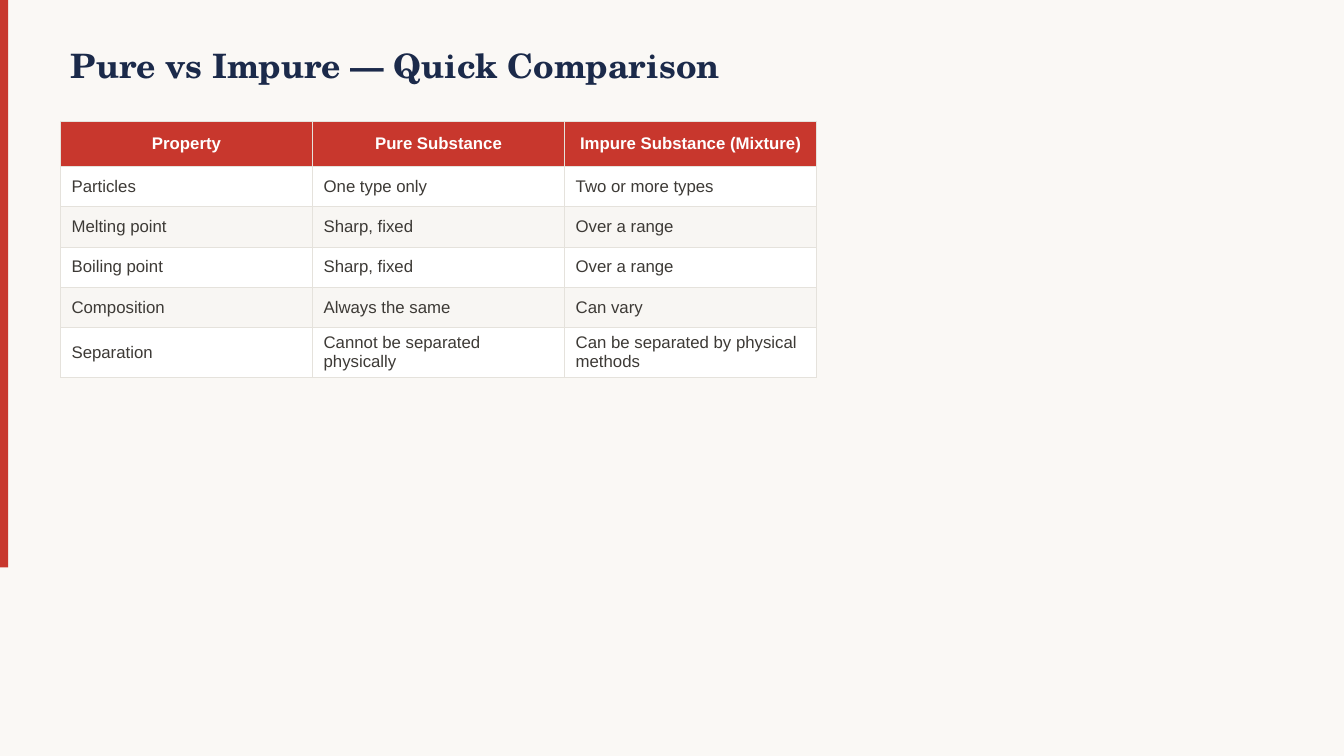
from lxml import etree
from pptx import Presentation
from pptx.dml.color import RGBColor
from pptx.enum.shapes import MSO_SHAPE as Preset
from pptx.enum.text import MSO_ANCHOR as Anchor, MSO_AUTO_SIZE as AutoSize, PP_ALIGN as Align
from pptx.oxml import parse_xml
from pptx.oxml.ns import nsdecls
from pptx.util import Pt

PX = 9144
COLORS = {
    "background": "FAF8F5",
    "accent": "C8372D",
    "title": "1B2A4A",
    "header_text": "FFFFFF",
    "body_text": "3D3A36",
    "odd_row": "FFFFFF",
    "even_row": "F8F6F3",
    "border": "E5E2DC",
}
COMPARISON = [
    ("Property", "Pure Substance", "Impure Substance (Mixture)"),
    ("Particles", "One type only", "Two or more types"),
    ("Melting point", "Sharp, fixed", "Over a range"),
    ("Boiling point", "Sharp, fixed", "Over a range"),
    ("Composition", "Always the same", "Can vary"),
    ("Separation", "Cannot be separated physically", "Can be separated by physical methods"),
]


def px(*lengths):
    """Turn whole px lengths into EMU."""
    return [length * PX for length in lengths]


def paint(fill, color):
    """Give a fill one solid colour from the palette."""
    fill.solid()
    fill.fore_color.rgb = RGBColor.from_string(COLORS[color])


def write(frame, text, font_name, size, color, bold, align):
    """Put one formatted paragraph into a text frame."""
    paragraph = frame.paragraphs[0]
    paragraph.text = text
    paragraph.alignment = align
    font = paragraph.runs[0].font
    font.name, font.size, font.bold = font_name, Pt(size), bold
    font.color.rgb = RGBColor.from_string(COLORS[color])


def add_accent_bar(slide):
    """Draw the red bar on the left edge."""
    bar = slide.shapes.add_shape(Preset.RECTANGLE, *px(0, 0, 8, 563))
    bar.shadow.inherit = False
    paint(bar.fill, "accent")
    bar.line.fill.background()


def set_title(slide, text):
    """Place and format the slide title."""
    title = slide.shapes.title
    title.left, title.top, title.width, title.height = px(60, 30, 1000, 70)
    frame = title.text_frame
    frame.auto_size = AutoSize.NONE
    frame.word_wrap = True
    frame.vertical_anchor = Anchor.MIDDLE
    write(frame, text, "TeX Gyre Schola", 24, "title", True, Align.LEFT)


def add_borders(cell):
    """Outline all four sides of a table cell."""
    properties = cell._tc.get_or_add_tcPr()
    for side in ("lnL", "lnR", "lnT", "lnB"):
        line = parse_xml(f'<a:{side} {nsdecls("a")} w="{Pt(0.5)}"><a:solidFill/></a:{side}>')
        color = etree.SubElement(line[0], line[0].tag.replace("solidFill", "srgbClr"))
        color.set("val", COLORS["border"])
        properties.append(line)


def format_cell(cell, text, row_index):
    """Fill a table cell with text in the style of its row."""
    header = row_index == 0
    add_borders(cell)
    paint(cell.fill, "accent" if header else "odd_row" if row_index % 2 else "even_row")
    cell.vertical_anchor = Anchor.MIDDLE
    cell.margin_left, cell.margin_top, cell.margin_right, cell.margin_bottom = px(11, 6, 11, 6)
    write(cell.text_frame, text, "Arial", 12, "header_text" if header else "body_text",
          header, Align.CENTER if header else Align.LEFT)


def add_comparison_table(slide, rows):
    """Build the comparison table with equal columns."""
    frame = slide.shapes.add_table(len(rows), len(rows[0]), *px(60, 120, 750, 245))
    table = frame.table
    for row_index, texts in enumerate(rows):
        table.rows[row_index].height = (40 if row_index else 45) * PX
        for column_index, text in enumerate(texts):
            format_cell(table.cell(row_index, column_index), text, row_index)


def main():
    """Build and save the slide."""
    presentation = Presentation()
    presentation.slide_width, presentation.slide_height = px(1333, 750)
    slide = presentation.slides.add_slide(presentation.slide_layouts[5])
    paint(slide.background.fill, "background")
    add_accent_bar(slide)
    set_title(slide, "Pure vs Impure — Quick Comparison")
    add_comparison_table(slide, COMPARISON)
    presentation.save("out.pptx")


if __name__ == "__main__":
    main()
